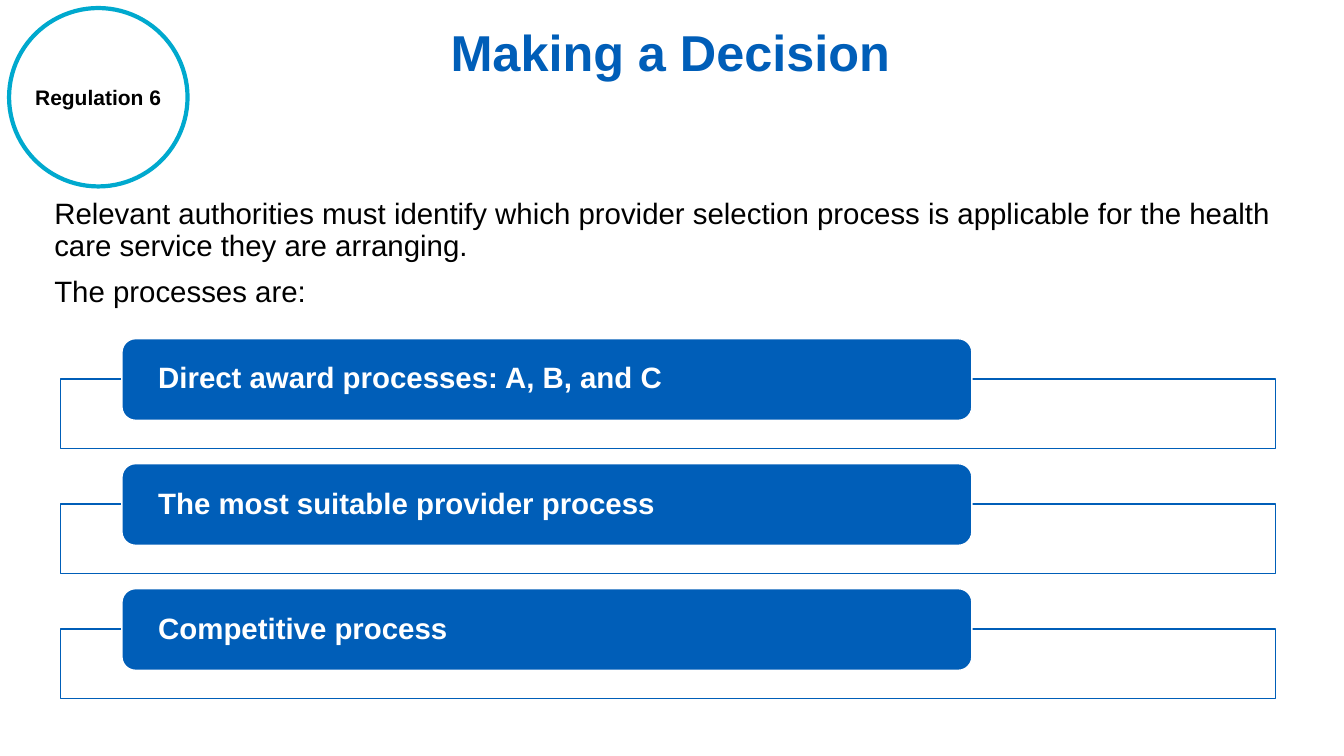
from dataclasses import dataclass

import pptx
import pptx.dml.color
import pptx.enum.shapes
import pptx.enum.text
import pptx.oxml
import pptx.oxml.ns
import pptx.presentation
import pptx.shapes.autoshape
import pptx.slide
import pptx.text.text
import pptx.util
from pptx.util import Inches

BLUE = pptx.dml.color.RGBColor(0x00, 0x5E, 0xB8)
CYAN = pptx.dml.color.RGBColor(0x00, 0xA9, 0xCE)
BLACK = pptx.dml.color.RGBColor(0x00, 0x00, 0x00)
WHITE = pptx.dml.color.RGBColor(0xFF, 0xFF, 0xFF)

SHAPES = pptx.enum.shapes.MSO_SHAPE
MIDDLE = pptx.enum.text.MSO_ANCHOR.MIDDLE
LEFT = pptx.enum.text.PP_ALIGN.LEFT

FIRST_LABEL_TOP = 3.36
PROCESS_STEP = 1.24
FRAME_DROP = 0.4


@dataclass(frozen=True)
class Box:
    left: float
    top: float
    width: float
    height: float

    def lengths(self) -> tuple[int, int, int, int]:
        return (Inches(self.left), Inches(self.top),
                Inches(self.width), Inches(self.height))


@dataclass(frozen=True)
class TextStyle:
    size: float
    color: pptx.dml.color.RGBColor
    bold: bool = False
    line_spacing: float = 1.0
    space_before: float = 0


TITLE_STYLE = TextStyle(36, BLUE, bold=True)
BADGE_STYLE = TextStyle(15, BLACK, bold=True)
INTRO_STYLE = TextStyle(21, BLACK, line_spacing=0.9, space_before=10)
PROCESS_STYLE = TextStyle(21, WHITE, bold=True, line_spacing=0.9)

INTRO = (
    "Relevant authorities must identify which provider selection process is "
    "applicable for the health care service they are arranging.\n"
    "The processes are:"
)
PROCESSES = (
    "Direct award processes: A, B, and C",
    "The most suitable provider process",
    "Competitive process",
)


def write(frame: pptx.text.text.TextFrame, text: str, style: TextStyle) -> None:
    frame.text = text
    for index, paragraph in enumerate(frame.paragraphs):
        paragraph.alignment = LEFT
        paragraph.line_spacing = style.line_spacing
        if index:
            paragraph.space_before = pptx.util.Pt(style.space_before)
        for run in paragraph.runs:
            run.font.name = "Arial"
            run.font.size = pptx.util.Pt(style.size)
            run.font.bold = style.bold
            run.font.color.rgb = style.color


def add_text(slide: pptx.slide.Slide, box: Box, text: str, style: TextStyle,
             wrap: bool = True) -> pptx.text.text.TextFrame:
    frame = slide.shapes.add_textbox(*box.lengths()).text_frame
    frame.word_wrap = wrap
    write(frame, text, style)
    return frame


def add_outlined(slide: pptx.slide.Slide, kind: pptx.enum.shapes.MSO_SHAPE, box: Box,
                 fill: pptx.dml.color.RGBColor, line: pptx.dml.color.RGBColor,
                 line_width: float = 1) -> pptx.shapes.autoshape.Shape:
    shape = slide.shapes.add_shape(kind, *box.lengths())
    shape.shadow.inherit = False
    shape.fill.solid()
    shape.fill.fore_color.rgb = fill
    shape.line.color.rgb = line
    shape.line.width = pptx.util.Pt(line_width)
    return shape


def set_fill_opacity(shape: pptx.shapes.autoshape.Shape, percent: int) -> None:
    color = shape.fill._xPr.find(".//" + pptx.oxml.ns.qn("a:srgbClr"))
    color.append(pptx.oxml.parse_xml(
        f'<a:alpha {pptx.oxml.ns.nsdecls("a")} val="{percent * 1000}"/>'))


def add_process(slide: pptx.slide.Slide, label_top: float, name: str) -> None:
    """Draw an open frame with the process label lying over its top edge."""
    frame_box = Box(0.6, label_top + FRAME_DROP, 12.05, 0.69)
    set_fill_opacity(add_outlined(slide, SHAPES.RECTANGLE, frame_box, WHITE, BLUE), 90)

    label_box = Box(1.21, label_top, 8.43, 0.81)
    label = add_outlined(slide, SHAPES.ROUNDED_RECTANGLE, label_box, BLUE, WHITE).text_frame
    label.word_wrap = True
    label.vertical_anchor = MIDDLE
    # The preset's text area is already inset by the rounded corners.
    label.margin_left = label.margin_right = Inches(0.32)
    label.margin_top = label.margin_bottom = Inches(0)
    write(label, name, PROCESS_STYLE)


def main() -> None:
    deck = pptx.Presentation()
    deck.slide_width, deck.slide_height = Inches(13.33), Inches(7.5)
    slide = deck.slides.add_slide(deck.slide_layouts[6])

    add_text(slide, Box(0.44, 1.93, 12.46, 1.21), INTRO, INTRO_STYLE)
    title = add_text(slide, Box(4.37, 0.01, 4.59, 0.99), "Making a Decision", TITLE_STYLE)
    title.vertical_anchor = MIDDLE

    add_outlined(slide, SHAPES.OVAL, Box(0.09, 0.08, 1.77, 1.77), WHITE, CYAN, 3)
    badge = add_text(slide, Box(0.25, 0.79, 1.46, 0.35), "Regulation 6", BADGE_STYLE, wrap=False)
    badge.auto_size = pptx.enum.text.MSO_AUTO_SIZE.SHAPE_TO_FIT_TEXT

    for row, name in enumerate(PROCESSES):
        add_process(slide, FIRST_LABEL_TOP + row * PROCESS_STEP, name)

    deck.save("out.pptx")


if __name__ == "__main__":
    main()
